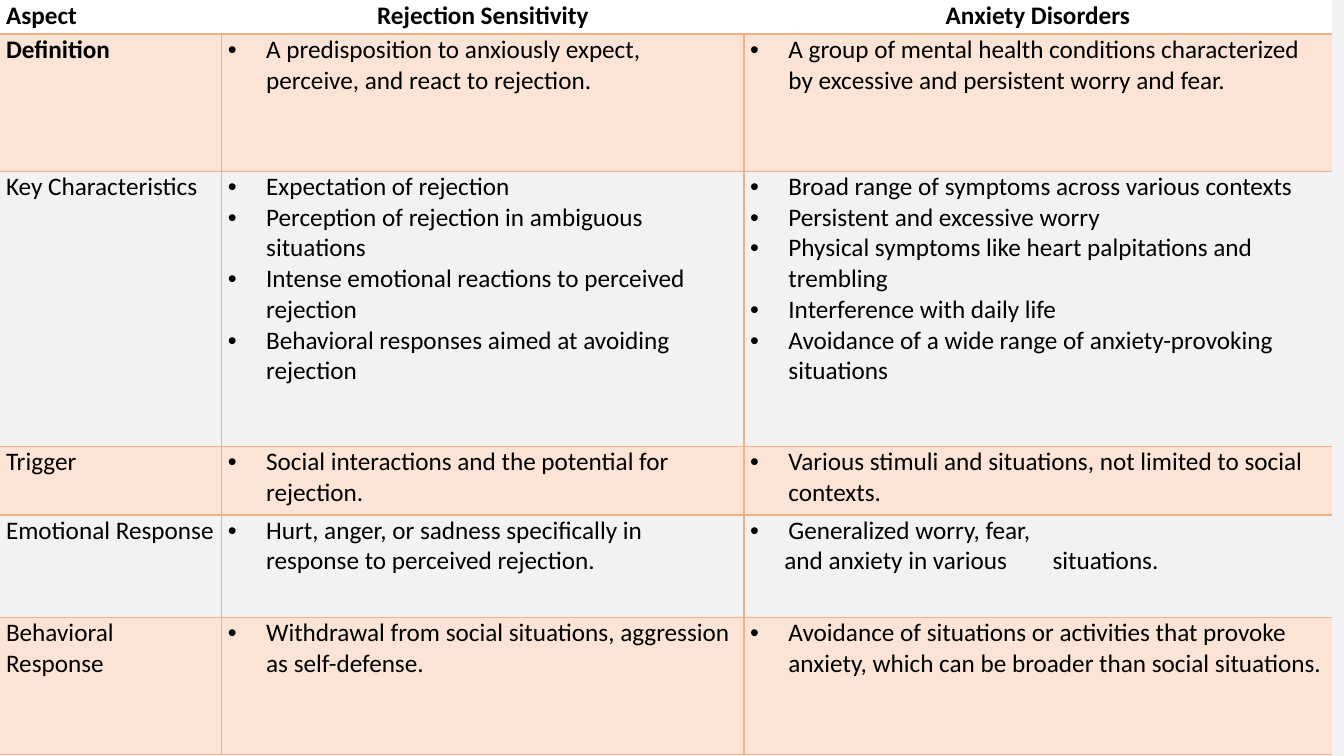
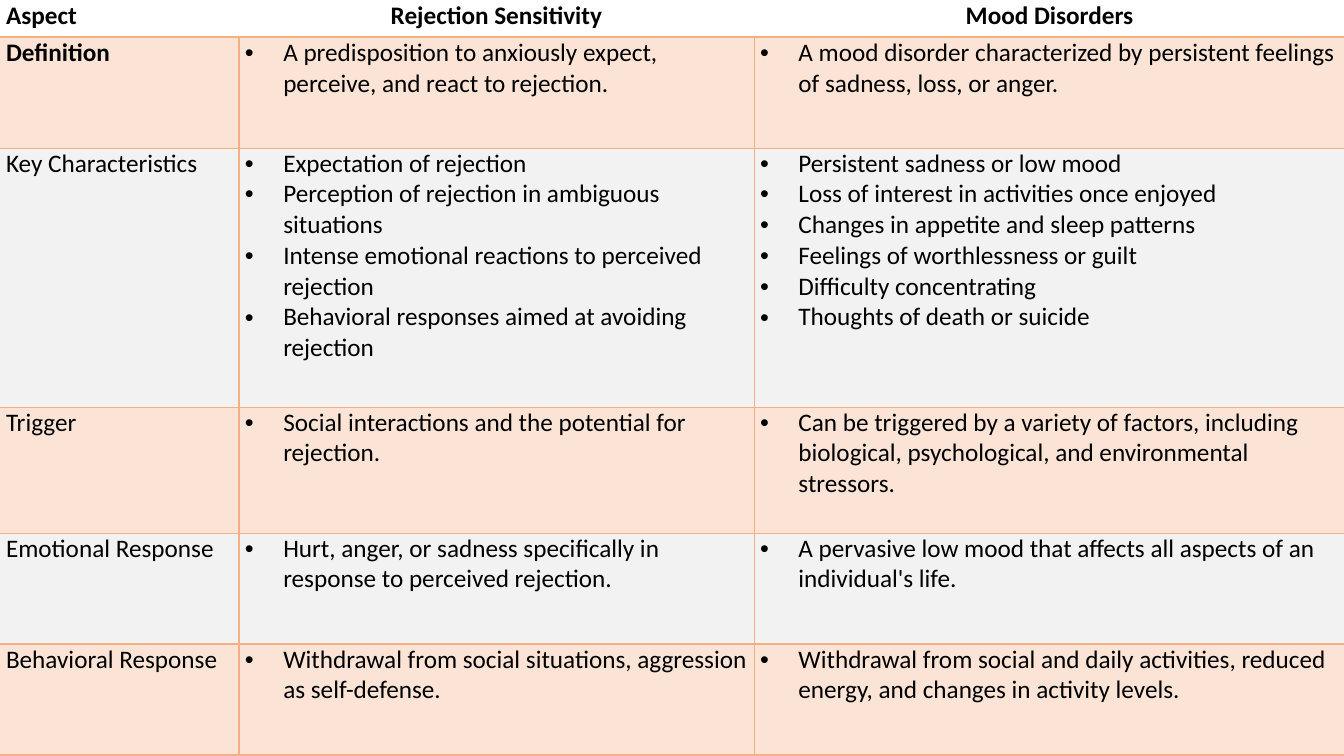
from dataclasses import dataclass

from lxml.etree import SubElement
from pptx import Presentation
from pptx.dml.color import RGBColor
from pptx.enum.text import PP_ALIGN
from pptx.oxml.ns import qn
from pptx.util import Inches, Pt


@dataclass(frozen=True)
class Theme:
    font: str = "Calibri"
    text_size: int = 18
    text: str = "000000"
    background: str = "F2F2F2"
    header: str = "FFFFFF"
    band: str = "FBE4D5"
    border: str = "F4B083"
    border_width: float = 1
    header_border_width: float = 1.5
    cell_margin: float = 0.06
    bullet_indent: float = 0.38


# Text shared by both comparisons
ASPECTS = ["Definition", "Key Characteristics", "Trigger",
           "Emotional Response", "Behavioral Response"]
REJECTION_SENSITIVITY = [
    ["A predisposition to anxiously expect, perceive, and react to rejection."],
    ["Expectation of rejection",
     "Perception of rejection in ambiguous situations",
     "Intense emotional reactions to perceived rejection",
     "Behavioral responses aimed at avoiding rejection"],
    ["Social interactions and the potential for rejection."],
    ["Hurt, anger, or sadness specifically in response to perceived rejection."],
    ["Withdrawal from social situations, aggression as self-defense."],
]

# Text of the disorder columns; a paragraph with a tab is an unbulleted continuation
ANXIETY_DISORDERS = [
    ["A group of mental health conditions characterized by excessive and "
     "persistent worry and fear."],
    ["Broad range of symptoms across various contexts",
     "Persistent and excessive worry",
     "Physical symptoms like heart palpitations and trembling",
     "Interference with daily life",
     "Avoidance of a wide range of anxiety-provoking situations"],
    ["Various stimuli and situations, not limited to social contexts."],
    ["Generalized worry, fear,", "and anxiety in various\tsituations."],
    ["Avoidance of situations or activities that provoke anxiety, which can be "
     "broader than social situations."],
]
MOOD_DISORDERS = [
    ["A mood disorder characterized by persistent feelings of sadness, loss, or anger."],
    ["Persistent sadness or low mood",
     "Loss of interest in activities once enjoyed",
     "Changes in appetite and sleep patterns",
     "Feelings of worthlessness or guilt",
     "Difficulty concentrating",
     "Thoughts of death or suicide"],
    ["Can be triggered by a variety of factors, including biological, "
     "psychological, and environmental stressors."],
    ["A pervasive low mood that affects all aspects of an individual's life."],
    ["Withdrawal from social and daily activities, reduced energy, and changes "
     "in activity levels."],
]


class Deck:
    """Holds the theme and the slide being built."""

    def __init__(self, theme):
        self.theme = theme
        self.slide = None
        self.presentation = Presentation()
        self.presentation.slide_width = Inches(13.33)
        self.presentation.slide_height = Inches(7.5)

    def add_slide(self):
        self.slide = self.presentation.slides.add_slide(self.presentation.slide_layouts[6])
        fill = self.slide.background.fill
        fill.solid()
        fill.fore_color.rgb = RGBColor.from_string(self.theme.background)

    def add_comparison(self, disorder, entries, widths, heights):
        shape = self.slide.shapes.add_table(
            len(heights), len(widths), 0, 0, Inches(sum(widths)), Inches(sum(heights)))
        table = shape.table
        table.first_row = table.horz_banding = False
        for column, width in zip(table.columns, widths):
            column.width = Inches(width)
        for row, height in zip(table.rows, heights):
            row.height = Inches(height)

        # Header row, then one row per aspect
        rows = [(["Aspect"], ["Rejection Sensitivity"], [disorder])]
        rows += [([aspect], sensitivity, entry) for aspect, sensitivity, entry
                 in zip(ASPECTS, REJECTION_SENSITIVITY, entries)]
        for row_index, contents in enumerate(rows):
            for column_index, texts in enumerate(contents):
                cell = table.cell(row_index, column_index)
                self.style_cell(cell, row_index, column_index, len(widths) - 1)
                self.write_cell(cell, texts, row_index, column_index)

    def style_cell(self, cell, row_index, column_index, last_column):
        theme = self.theme
        margin = Inches(theme.cell_margin)
        layout = {"margin_left": margin, "margin_right": margin,
                  "margin_top": 0, "margin_bottom": 0}
        for name, value in layout.items():
            setattr(cell, name, value)

        # Borders: inner verticals in the body, a heavier rule below the header
        is_body = row_index > 0
        widths = {
            "a:lnL": theme.border_width if is_body and column_index > 0 else 0,
            "a:lnR": theme.border_width if is_body and column_index < last_column else 0,
            "a:lnT": (0, theme.header_border_width)[row_index] if row_index < 2
            else theme.border_width,
            "a:lnB": theme.border_width if is_body else theme.header_border_width,
        }
        properties = cell._tc.get_or_add_tcPr()
        for tag, width in widths.items():
            line = SubElement(properties, qn(tag), w=str(Pt(width)))
            if width:
                fill = SubElement(line, qn("a:solidFill"))
                SubElement(fill, qn("a:srgbClr"), val=theme.border)
            else:
                SubElement(line, qn("a:noFill"))

        # Alternating row fill
        color = theme.band if row_index % 2 else theme.background
        cell.fill.solid()
        cell.fill.fore_color.rgb = RGBColor.from_string(color if is_body else theme.header)

    def write_cell(self, cell, texts, row_index, column_index):
        theme = self.theme
        is_header = row_index == 0
        bold = is_header or (row_index == 1 and column_index == 0)
        font_format = {"name": theme.font, "size": Pt(theme.text_size), "bold": bold}
        frame = cell.text_frame
        for index, text in enumerate(texts):
            paragraph = frame.add_paragraph() if index else frame.paragraphs[0]
            run = paragraph.add_run()
            run.text = text
            for name, value in font_format.items():
                setattr(run.font, name, value)
            run.font.color.rgb = RGBColor.from_string(theme.text)
            if column_index == 0:
                continue
            if is_header:
                paragraph.alignment = PP_ALIGN.CENTER
            elif "\t" in text:
                self.add_tab_stop(paragraph, 0.34, 3)
            else:
                self.add_bullet(paragraph)

    def add_bullet(self, paragraph):
        indent = Inches(self.theme.bullet_indent)
        properties = paragraph._p.get_or_add_pPr()
        properties.set("marL", str(indent))
        properties.set("indent", str(-indent))
        SubElement(properties, qn("a:buFont"), typeface="Arial")
        SubElement(properties, qn("a:buChar"), char="•")

    def add_tab_stop(self, paragraph, indent, position):
        properties = paragraph._p.get_or_add_pPr()
        properties.set("marL", "0")
        properties.set("indent", str(Inches(indent)))
        SubElement(properties, qn("a:buNone"))
        tabs = SubElement(properties, qn("a:tabLst"))
        SubElement(tabs, qn("a:tab"), pos=str(Inches(position)), algn="l")


def main():
    deck = Deck(Theme())

    # Rejection sensitivity and anxiety
    deck.add_slide()
    deck.add_comparison("Anxiety Disorders", ANXIETY_DISORDERS,
                        [2.2, 5.18, 5.83], [0.34, 1.36, 2.73, 0.68, 1.02, 1.36])

    # Rejection sensitivity and mood
    deck.add_slide()
    deck.add_comparison("Mood Disorders", MOOD_DISORDERS,
                        [2.37, 5.11, 5.86], [0.37, 1.1, 2.57, 1.25, 1.1, 1.1])

    deck.presentation.save("out.pptx")


if __name__ == "__main__":
    main()
